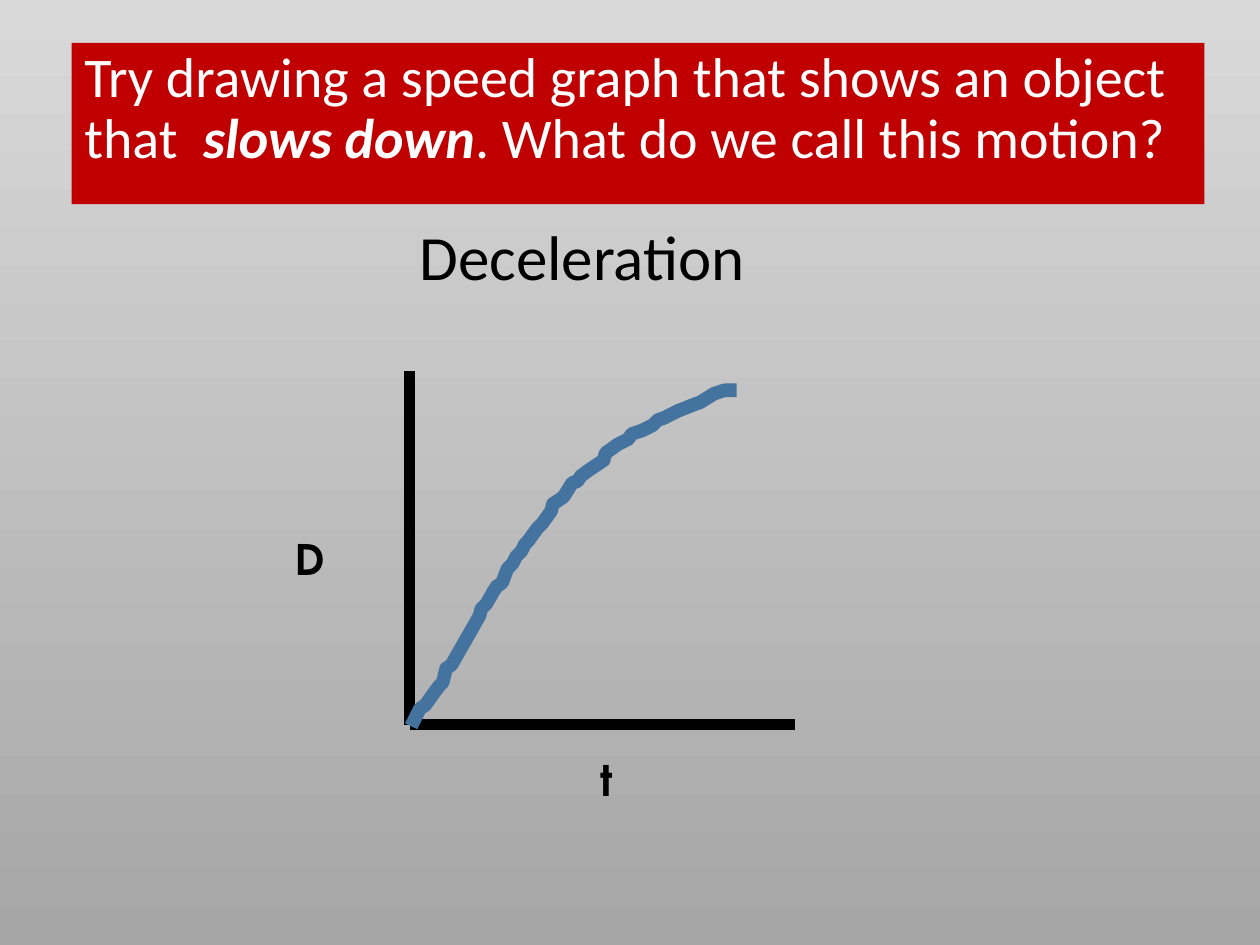
from typing import NamedTuple

from lxml import etree
from pptx import Presentation
from pptx.dml import color
from pptx.enum import shapes, text
from pptx.oxml import ns
from pptx.util import Pt

HUES = {"top": "D9D9D9", "base": "A6A6A6", "band": "C00000",
        "ink": "000000", "pale": "FFFFFF", "curve": "43739E"}


class Box(NamedTuple):
    x: float
    y: float
    w: float
    h: float


class Label(NamedTuple):
    words: str
    box: Box
    look: dict


class Axis(NamedTuple):
    x1: float
    y1: float
    x2: float
    y2: float


BAND = Box(41, 24.5, 647.3, 92.2)
ASK = [("Try drawing a speed graph that shows an object that  ", False),
       ("slows down", True),
       (". What do we call this motion?", False)]

MARK = {"name": "TeX Gyre Adventor", "size": Pt(24), "bold": True}
LABELS = [Label("D", Box(162, 301.5, 27, 36), MARK),
          Label("t", Box(333, 427.5, 27, 36), MARK),
          Label("Deceleration", Box(211, 121, 243.4, 51),
                {"name": "Calibri", "size": Pt(36)})]

AXES = [Axis(234, 212, 234, 414), Axis(234, 414, 454.5, 414)]

CURVE = [
    (235.4, 414.7), (238.3, 409), (240.5, 405.4), (243.4, 403.2), (247.7, 396),
    (250.6, 392.4), (252.7, 389.5), (254.9, 382.3), (257.8, 380.2),
    (273.6, 352.1), (275, 348.5), (277.9, 344.9), (282.2, 338.4),
    (284.4, 334.8), (287.3, 332.6), (290.2, 325.4), (293, 321.8),
    (295.2, 318.2), (298.1, 314.6), (299.5, 311), (302.4, 308.9),
    (307.4, 302.4), (310.3, 298.8), (314.6, 291.6), (316.1, 288),
    (321.8, 283.7), (326.9, 276.5), (329.8, 275), (331.9, 272.2),
    (335.5, 269.3), (339.1, 267.1), (344.9, 262.8), (346.3, 259.2),
    (352.8, 254.2), (358.6, 251.3), (361.4, 248.4), (367.2, 246.2),
    (373, 242.6), (375.8, 240.5), (378.7, 239), (387.4, 234.7),
    (396.7, 231.1), (399.6, 230.4), (408.2, 225.4), (414, 223.2),
    (421.2, 223.2)]


def rgb(key: str) -> color.RGBColor:
    return color.RGBColor.from_string(HUES[key])


def style(font, hue: str, look: dict) -> None:
    for name, value in look.items():
        setattr(font, name, value)
    font.color.rgb = rgb(hue)


def stroke(line, hue: str, width: float) -> None:
    line.color.rgb = rgb(hue)
    line.width = Pt(width)


def shade(slide) -> None:
    """Fill the background from light at the top to dark at the bottom."""
    fill = slide.background.fill
    fill.gradient()
    fill.gradient_angle = 270
    for stop, hue, place in zip(fill.gradient_stops, ("top", "base"), (0, 1)):
        stop.color.rgb = rgb(hue)
        stop.position = place


def draw_ask(body) -> None:
    body.left, body.top, body.width, body.height = map(Pt, BAND)
    body.fill.solid()
    body.fill.fore_color.rgb = rgb("band")
    body.text_frame.auto_size = text.MSO_AUTO_SIZE.NONE
    para = body.text_frame.paragraphs[0]
    para.line_spacing = 0.9
    para.space_before = Pt(10)
    props = para._p.get_or_add_pPr()
    props.set("marL", "0")
    props.set("indent", "0")
    etree.SubElement(props, ns.qn("a:buNone"))
    for words, strong in ASK:
        run = para.add_run()
        run.text = words
        style(run.font, "pale", {"name": "Calibri", "size": Pt(32),
                                 "bold": strong, "italic": strong})


def draw_label(slide, label: Label) -> None:
    frame = slide.shapes.add_textbox(*map(Pt, label.box)).text_frame
    frame.word_wrap = True
    frame.auto_size = text.MSO_AUTO_SIZE.SHAPE_TO_FIT_TEXT
    para = frame.paragraphs[0]
    para.alignment = text.PP_ALIGN.CENTER
    run = para.add_run()
    run.text = label.words
    style(run.font, "ink", label.look)


def draw_axis(slide, axis: Axis) -> None:
    line = slide.shapes.add_connector(
        shapes.MSO_CONNECTOR.STRAIGHT, *map(Pt, axis))
    stroke(line.line, "ink", 6)
    etree.SubElement(line._element.spPr, ns.qn("a:effectLst"))


def draw_curve(slide) -> None:
    pen = slide.shapes.build_freeform(*CURVE[0], scale=Pt(1))
    pen.add_line_segments(CURVE[1:], close=False)
    curve = pen.convert_to_shape()
    curve.shadow.inherit = False
    curve.fill.background()
    stroke(curve.line, "curve", 7.75)


def main() -> None:
    deck = Presentation()
    deck.slide_width, deck.slide_height = Pt(720), Pt(540)
    slide = deck.slides.add_slide(deck.slide_layouts[1])
    title = slide.shapes.title._element
    title.getparent().remove(title)
    shade(slide)
    draw_ask(slide.placeholders[1])
    for axis in AXES:
        draw_axis(slide, axis)
    for label in LABELS:
        draw_label(slide, label)
    draw_curve(slide)
    deck.save("out.pptx")


if __name__ == "__main__":
    main()
